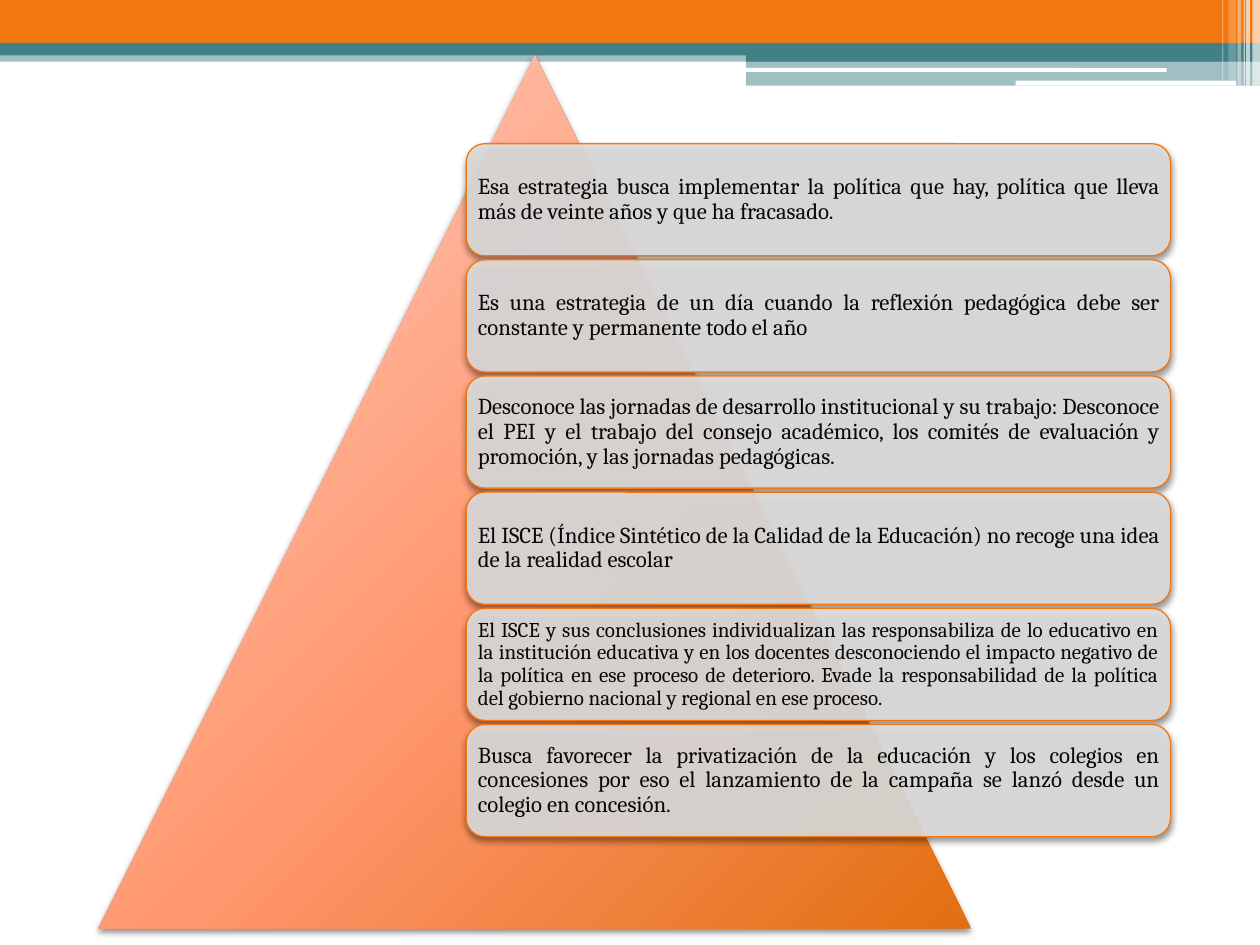
from lxml.etree import SubElement
from pptx import Presentation
from pptx.dml.color import RGBColor
from pptx.enum.shapes import MSO_SHAPE
from pptx.enum.text import MSO_ANCHOR, PP_ALIGN
from pptx.oxml import parse_xml
from pptx.oxml.ns import nsdecls, qn
from pptx.util import Inches, Pt

COLORS = {
    "orange": "F37711", "teal": "438086", "white": "FFFFFF",
    "card": "DEDEDE", "text": "080808",
    "peach": "FFD0C3", "salmon": "FF966D", "burnt": "E26F10",
}

prs = Presentation()
prs.slide_width, prs.slide_height = Inches(10), Inches(7.5)
s = prs.slides.add_slide(prs.slide_layouts[6])


def add_block(kind, box, color, alpha=100):
    """Add a borderless, shadowless shape; box is in inches, alpha in percent."""
    sp = s.shapes.add_shape(kind, *[Inches(v) for v in box])
    sp.shadow.inherit = False
    sp.fill.solid()
    sp.fill.fore_color.rgb = RGBColor.from_string(COLORS[color])
    sp.line.fill.background()
    if alpha < 100:
        clr = sp.fill._xPr.find(qn("a:solidFill"))[0]
        SubElement(clr, qn("a:alpha"), val=str(alpha * 1000))
    return sp


def add_shadow(sp):
    effects = sp._element.spPr.find(qn("a:effectLst"))
    effects.append(parse_xml(
        f'<a:outerShdw {nsdecls("a")} blurRad="{Pt(4)}" dist="{Pt(2)}" dir="5400000" rotWithShape="0">'
        '<a:srgbClr val="000000"><a:alpha val="45000"/></a:srgbClr></a:outerShdw>'))


# Header bands
for box, color, alpha in [
    ((0, 0.4, 10, 0.09), "teal", 50),
    ((0, 0, 10, 0.34), "orange", 100),
    ((0, 0.34, 10, 0.1), "teal", 100),
    ((5.92, 0.39, 4.08, 0.1), "teal", 100),
    ((5.92, 0.48, 4.08, 0.2), "teal", 50),
]:
    add_block(MSO_SHAPE.RECTANGLE, box, color, alpha)

for box in [(5.91, 0.54, 3.35, 0.03), (8.06, 0.64, 1.75, 0.04)]:
    add_block(MSO_SHAPE.ROUNDED_RECTANGLE, box, "white")

# Translucent stripes at the right edge
for left, width, height, alpha in [
    (9.94, 0.06, 0.68, 65), (9.89, 0.03, 0.68, 65), (9.87, 0.01, 0.68, 60),
    (9.82, 0.03, 0.68, 40), (9.75, 0.06, 0.64, 20), (9.7, 0.01, 0.64, 30),
]:
    add_block(MSO_SHAPE.RECTANGLE, (left, 0, width, height), "white", alpha)

# Pyramid
pyramid = add_block(MSO_SHAPE.ISOSCELES_TRIANGLE, (0.78, 0.44, 6.93, 6.93), "salmon")
stops = "".join(
    f'<a:gs pos="{pos * 1000}"><a:srgbClr val="{COLORS[name]}"/></a:gs>'
    for pos, name in [(0, "peach"), (55, "salmon"), (100, "burnt")])
spPr = pyramid._element.spPr
spPr.replace(spPr.find(qn("a:solidFill")), parse_xml(
    f'<a:gradFill {nsdecls("a")} rotWithShape="1"><a:gsLst>{stops}</a:gsLst><a:path path="circle">'
    '<a:fillToRect l="-40000" t="-90000" r="140000" b="190000"/></a:path></a:gradFill>'))
add_shadow(pyramid)

# Cards
CARD_TOP, CARD_STEP = 1.14, 0.922
cards = [
    ("Esa estrategia busca implementar la política que hay, política que lleva "
     "más de veinte años y que ha fracasado.", 13),
    ("Es una estrategia de un día cuando la reflexión pedagógica debe ser "
     "constante y permanente todo el año", 13),
    ("Desconoce las jornadas de desarrollo institucional y su trabajo: Desconoce "
     "el PEI y el trabajo del consejo académico, los comités de evaluación y "
     "promoción, y las jornadas pedagógicas.", 13),
    ("El ISCE (Índice Sintético de la Calidad de la Educación) no recoge una "
     "idea de la realidad escolar", 13),
    ("El ISCE y sus conclusiones individualizan las responsabiliza de lo educativo "
     "en la institución educativa y en los docentes desconociendo el impacto "
     "negativo de la política en ese proceso de deterioro. Evade la responsabilidad "
     "de la política del gobierno nacional y regional en ese proceso.", 12),
    ("Busca favorecer la privatización de la educación y los colegios en "
     "concesiones por eso el lanzamiento de la campaña se lanzó desde un colegio "
     "en concesión.", 13),
]
for i, (text, size) in enumerate(cards):
    box = (3.7, CARD_TOP + i * CARD_STEP, 5.59, 0.89)
    sp = add_block(MSO_SHAPE.ROUNDED_RECTANGLE, box, "card", 90)
    sp.line.color.rgb = RGBColor.from_string(COLORS["orange"])
    sp.line.width = Pt(0.75)
    add_shadow(sp)
    tf = sp.text_frame
    tf.word_wrap = True
    tf.vertical_anchor = MSO_ANCHOR.MIDDLE
    # The rounded corners already inset the text area by about 0.04 inch
    tf.margin_left = tf.margin_right = Inches(0.05)
    tf.margin_top = tf.margin_bottom = Inches(0.05)
    tf.text = text
    p = tf.paragraphs[0]
    p.alignment = PP_ALIGN.JUSTIFY
    p.line_spacing = 0.9
    font = p.runs[0].font
    font.name, font.size = "Cambria", Pt(size)
    font.color.rgb = RGBColor.from_string(COLORS["text"])

prs.save("out.pptx")
